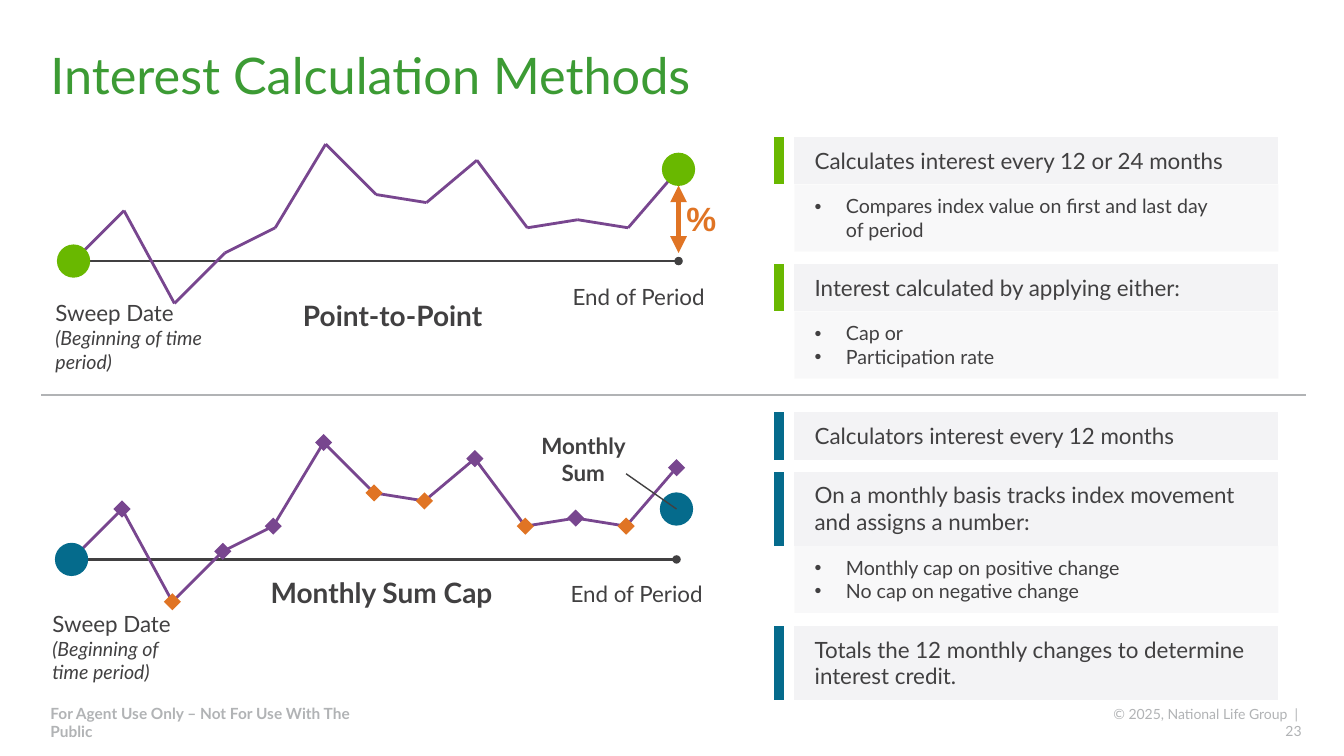
from pptx import Presentation
from pptx.dml.color import RGBColor
from pptx.enum.shapes import MSO_CONNECTOR as LINK, MSO_SHAPE as SHAPE
from pptx.enum.text import MSO_ANCHOR as ANCHOR, PP_ALIGN as ALIGN
from pptx.oxml.ns import qn
from pptx.util import Inches, Pt
from lxml.etree import SubElement

INK = RGBColor(0x41, 0x40, 0x41)
GRAY = RGBColor(0xB1, 0xB3, 0xB5)
TITLE = RGBColor(0x3C, 0x9B, 0x34)
GREEN = RGBColor(0x69, 0xB8, 0x00)
BLUE = RGBColor(0x05, 0x6B, 0x8C)
PURPLE = RGBColor(0x78, 0x46, 0x8F)
ORANGE = RGBColor(0xE0, 0x74, 0x24)
PALE = RGBColor(0xF3, 0xF3, 0xF5)

deck = Presentation()
deck.slide_width, deck.slide_height = Inches(13.33), Inches(7.5)
slide = deck.slides.add_slide(deck.slide_layouts[6])
shapes = slide.shapes


def text(at, lines, size, color=INK, bold=False, align=ALIGN.LEFT,
         anchor=ANCHOR.TOP, pad=(0, 0.05), font="Lato"):
    """Add a text box; lines after the first are 14 pt italic."""
    frame = shapes.add_textbox(*map(Inches, at)).text_frame
    frame.word_wrap = True
    frame.vertical_anchor = anchor
    frame.margin_left = frame.margin_right = Inches(pad[0])
    frame.margin_top = frame.margin_bottom = Inches(pad[1])
    for i, words in enumerate(lines):
        par = frame.paragraphs[0] if i == 0 else frame.add_paragraph()
        par.text = words
        par.alignment = align
        par.font.name = font
        par.font.size = Pt(14 if i else size)
        par.font.bold = bold
        par.font.italic = i > 0
        par.font.color.rgb = color
    return frame


def line(start, end, color, width, tip=None):
    """Add a line, with the same tip at both ends if one is named."""
    link = shapes.add_connector(LINK.STRAIGHT, *map(Inches, start + end))
    link.line.color.rgb = color
    link.line.width = Pt(width)
    props = link.element.spPr
    if tip:
        for tag in ("a:headEnd", "a:tailEnd"):
            SubElement(props.find(qn("a:ln")), qn(tag), type=tip)
    SubElement(props, qn("a:effectLst"))


# Title and footer
title = text((0.5, 0.5, 12.33, 0.55), ["Interest Calculation Methods"], 36,
             TITLE, anchor=ANCHOR.MIDDLE, pad=(0, 0))
title.paragraphs[0].line_spacing = 0.9
text((0.5, 7.07, 3.39, 0.19),
     ["For Agent Use Only – Not For Use With The Public"], 11, GRAY,
     bold=True, anchor=ANCHOR.MIDDLE, pad=(0, 0))
text((10.95, 7.08, 1.96, 0.17), ["© 2025, National Life Group  |  23"], 10,
     GRAY, align=ALIGN.RIGHT, anchor=ANCHOR.MIDDLE, pad=(0, 0))
line((0.41, 3.92), (12.95, 3.92), GRAY, 1)

# Index paths: monthly heights above the base line
STEP, DOT, GEM = 0.5, 0.33, 0.17
LEVELS = [0, 0.5, -0.42, 0.08, 0.33, 1.16, 0.66, 0.58, 1, 0.33, 0.41, 0.33, 0.91]
CHARTS = [
    # left, base, height of end dot, dot colour, monthly marks
    (0.73, 2.59, LEVELS[-1], GREEN, False),
    (0.71, 5.55, 0.5, BLUE, True),
]
for left, base, final, color, monthly in CHARTS:
    right = left + STEP * (len(LEVELS) - 1)
    points = [(left + STEP * i, base - up) for i, up in enumerate(LEVELS)]
    line((left, base), (right, base), INK, 2, "oval")
    for start, end in zip(points, points[1:]):
        line(start, end, PURPLE, 2)

    marks = [(SHAPE.OVAL, left, base, DOT, color),
             (SHAPE.OVAL, right, base - final, DOT, color)]
    if monthly:
        for (_, prev), (x, y) in zip(points, points[1:]):
            tint = ORANGE if y > prev else PURPLE
            marks.append((SHAPE.DIAMOND, x, y, GEM, tint))
    for kind, x, y, size, tint in marks:
        mark = shapes.add_shape(kind, Inches(x - size / 2), Inches(y - size / 2),
                                Inches(size), Inches(size))
        mark.shadow.inherit = False
        mark.fill.solid()
        mark.fill.fore_color.rgb = tint
        mark.line.fill.background()

# Chart labels
text((2.81, 2.76, 2.17, 0.74), ["Point-to-Point"], 20, bold=True,
     align=ALIGN.CENTER, anchor=ANCHOR.MIDDLE, pad=(0.1, 0.05))
text((2.12, 5.55, 3.33, 0.65), ["Monthly Sum Cap"], 20, bold=True,
     align=ALIGN.CENTER, anchor=ANCHOR.MIDDLE, pad=(0.1, 0.05))
text((0.55, 2.92, 1.47, 0.95), ["Sweep Date", "(Beginning of time period)"], 16)
text((0.52, 6, 1.5, 0.84), ["Sweep Date", "(Beginning of", "time period)"], 16)
for x, y in ((5.39, 2.76), (5.37, 5.71)):
    text((x, y, 1.6, 0.37), ["End of Period"], 16, align=ALIGN.RIGHT)

line((6.73, 1.84), (6.73, 2.51), ORANGE, 4, "triangle")
text((6.71, 1.91, 0.5, 0.5), ["%"], 24, ORANGE, bold=True,
     pad=(0.1, 0.05), font="Arial")
text((5.15, 4.24, 1.27, 0.64), ["Monthly Sum"], 16, bold=True,
     align=ALIGN.CENTER, pad=(0.1, 0.05))
line((6.21, 4.7), (6.71, 5.05), INK, 1)

# Cards: top, colour, head height, head, bullets
COLS = (0.1, 0.1, 4.8)
PLAIN = "{2D5ABB26-0587-4C30-8999-92F81FD0307C}"
CARDS = [
    (1.36, GREEN, 0.47, "Calculates interest every 12 or 24 months",
     ["Compares index value on first and last day \vof period"]),
    (2.62, GREEN, 0.47, "Interest calculated by applying either:",
     ["Cap or", "Participation rate"]),
    (4.09, BLUE, 0.47, "Calculators interest every 12 months", []),
    (4.68, BLUE, 0.73,
     "On a monthly basis tracks index movement and assigns a number:",
     ["Monthly cap on positive change", "No cap on negative change"]),
    (6.21, BLUE, 0.73,
     "Totals the 12 monthly changes to determine interest credit.", []),
]
for top, color, high, head, items in CARDS:
    rows = [(high, [head])] + ([(0.66, items)] if items else [])
    total = sum(row[0] for row in rows)
    table = shapes.add_table(len(rows), len(COLS), Inches(7.68), Inches(top),
                             Inches(sum(COLS)), Inches(total)).table
    table.first_row = table.horz_banding = False
    table._tbl.tblPr.find(qn("a:tableStyleId")).text = PLAIN
    for col, wide in zip(table.columns, COLS):
        col.width = Inches(wide)
    for r, (tall, lines) in enumerate(rows):
        table.rows[r].height = Inches(tall)
        bar, gap, body = table.rows[r].cells
        for cell in (bar, gap):
            cell.margin_left = cell.margin_right = 0
            cell.fill.background()
        if r == 0:
            bar.fill.solid()
            bar.fill.fore_color.rgb = color
        body.fill.solid()
        body.fill.fore_color.rgb = PALE
        body.margin_left = Inches(0.2)
        body.margin_right = body.margin_top = body.margin_bottom = Inches(0.1)
        if r:
            shade = body._tc.tcPr.find(qn("a:solidFill"))[0]
            SubElement(shade, qn("a:alpha"), val="50000")
        frame = body.text_frame
        for i, words in enumerate(lines):
            par = frame.paragraphs[0] if i == 0 else frame.add_paragraph()
            par.text = words
            if r:
                props = par._p.get_or_add_pPr()
                props.set("marL", str(Inches(0.31)))
                props.set("indent", str(-Inches(0.31)))
                SubElement(props, qn("a:buFont"), typeface="Arial")
                SubElement(props, qn("a:buChar"), char="•")
            par.font.name = "Lato"
            par.font.size = Pt(14 if r else 16)
            par.font.color.rgb = INK

deck.save("out.pptx")
